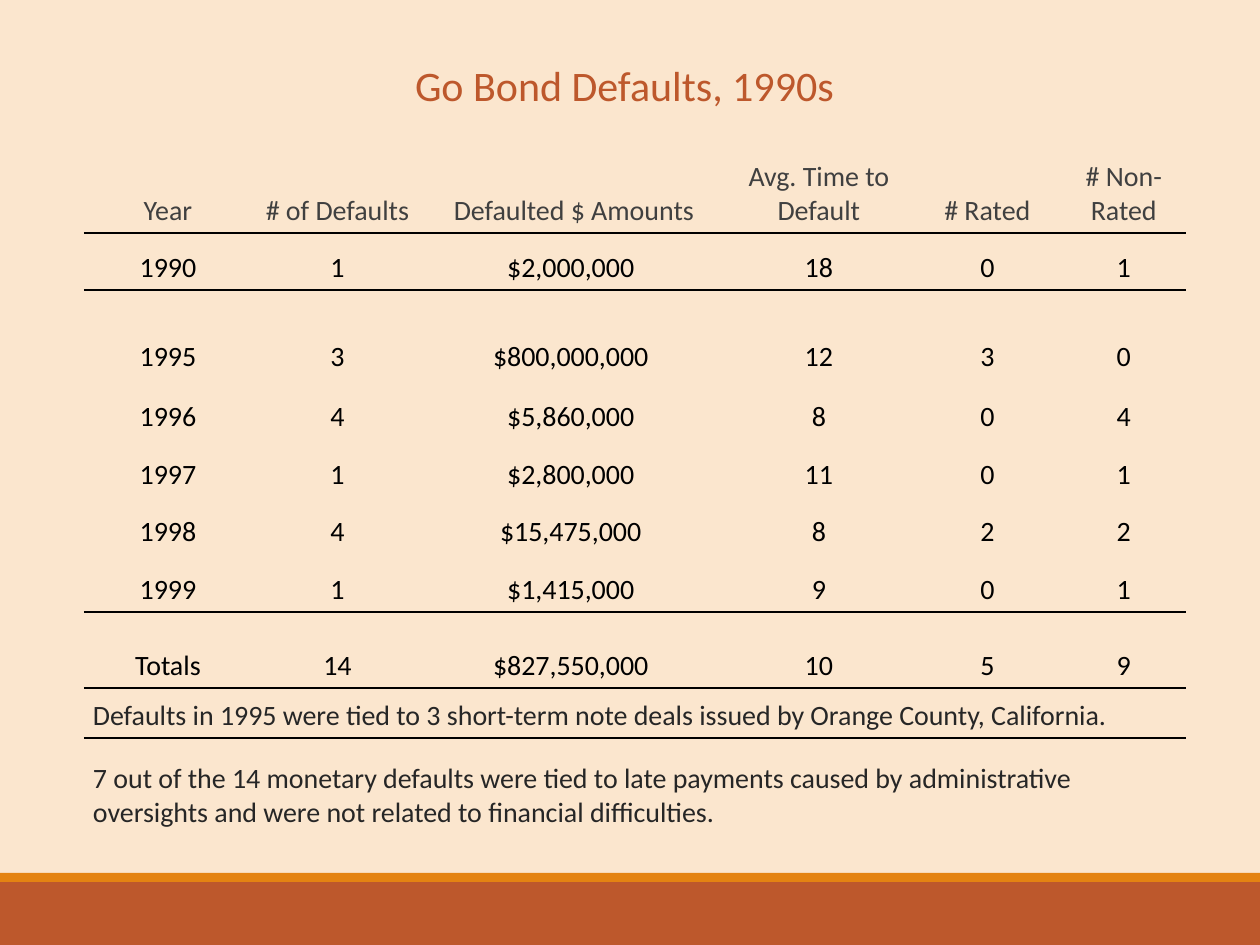
from dataclasses import dataclass

from lxml.etree import SubElement
from pptx import Presentation
from pptx.dml.color import RGBColor
from pptx.enum.shapes import MSO_SHAPE
from pptx.enum.text import MSO_ANCHOR, PP_ALIGN
from pptx.oxml.ns import qn
from pptx.util import Pt

PX = 914400 // 126


@dataclass(frozen=True)
class Theme:
    font: str = "Calibri"
    background: str = "FBE6CE"
    rust: str = "BD582C"
    orange: str = "E48312"
    header: str = "404040"
    body: str = "000000"
    note: str = "262626"
    rule: str = "000000"
    title_size: int = 24
    table_size: int = 16
    rule_width: int = 1


theme = Theme()


def write(paragraph, text, size, color, alignment):
    paragraph.text = text
    paragraph.alignment = alignment
    for run in paragraph.runs:
        run.font.name = theme.font
        run.font.size = Pt(size)
        run.font.color.rgb = RGBColor.from_string(color)


def add_rule(cell, side):
    """Draw a border on one side of a cell: lnT or lnB. Call before filling."""
    properties = cell._tc.get_or_add_tcPr()
    line = SubElement(properties, qn(f"a:{side}"), w=str(Pt(theme.rule_width)))
    fill = SubElement(line, qn("a:solidFill"))
    SubElement(fill, qn("a:srgbClr"), val=theme.rule)


presentation = Presentation()
presentation.slide_width = 1260 * PX
presentation.slide_height = 945 * PX
slide = presentation.slides.add_slide(presentation.slide_layouts[6])
slide.background.fill.solid()
slide.background.fill.fore_color.rgb = RGBColor.from_string(theme.background)

# Footer bands
for top, height, color in ((882, 63, theme.rust), (873, 9, theme.orange)):
    band = slide.shapes.add_shape(
        MSO_SHAPE.RECTANGLE, 0, top * PX, 1260 * PX, height * PX)
    band.shadow.inherit = False
    band.fill.solid()
    band.fill.fore_color.rgb = RGBColor.from_string(color)
    band.line.fill.background()

# Defaults table
records = [
    ("Year", "# of Defaults", "Defaulted $ Amounts", "Avg. Time to Default",
     "# Rated", "# Non-Rated"),
    ("1990", "1", "$2,000,000 ", "18", "0", "1"),
    ("1995", "3", "$800,000,000 ", "12", "3", "0"),
    ("1996", "4", "$5,860,000 ", "8", "0", "4"),
    ("1997", "1", "$2,800,000 ", "11", "0", "1"),
    ("1998", "4", "$15,475,000 ", "8", "2", "2"),
    ("1999", "1", "$1,415,000 ", "9", "0", "1"),
    ("Totals", "14", "$827,550,000 ", "10", "5", "9"),
]
notes = [
    "Defaults in 1995 were tied to 3 short-term note deals issued by "
    "Orange County, California.",
    "7 out of the 14 monetary defaults were tied to late payments caused by "
    "administrative oversights and were not related to financial difficulties.",
]
column_widths = [168, 171, 302, 188, 149, 124]
row_heights = [97, 57, 89, 60, 58, 57, 58, 76, 50, 97]
ruled_rows = {0, 6, 7}  # rows with a rule underneath

frame = slide.shapes.add_table(
    len(row_heights), len(column_widths), 84 * PX, 136 * PX,
    sum(column_widths) * PX, sum(row_heights) * PX)
table = frame.table
table.first_row = False
table.horz_banding = False
style = table._tbl.tblPr.find(qn("a:tableStyleId"))
style.text = "{2D5ABB26-0587-4C30-8999-92F81FD0307C}"  # no style, no grid
for column, width in zip(table.columns, column_widths):
    column.width = width * PX
for row, height in zip(table.rows, row_heights):
    row.height = height * PX

for row_index, row in enumerate(table.rows):
    for cell in row.cells:
        cell.vertical_anchor = MSO_ANCHOR.BOTTOM
        cell.margin_left = cell.margin_right = 9 * PX
        cell.margin_top = cell.margin_bottom = 5 * PX
        if row_index - 1 in ruled_rows:
            add_rule(cell, "lnT")
        if row_index in ruled_rows:
            add_rule(cell, "lnB")
        cell.fill.background()

for row_index, record in enumerate(records):
    color = theme.body if row_index else theme.header
    for column_index, text in enumerate(record):
        paragraph = table.cell(row_index, column_index).text_frame.paragraphs[0]
        write(paragraph, text, theme.table_size, color, PP_ALIGN.CENTER)

for row_index, note in enumerate(notes, start=len(records)):
    cell = table.cell(row_index, 0)
    cell.merge(table.cell(row_index, len(column_widths) - 1))
    write(cell.text_frame.paragraphs[0], note, theme.table_size, theme.note,
          PP_ALIGN.LEFT)

# Title
title = slide.shapes.add_textbox(336 * PX, 63 * PX, 577 * PX, 54 * PX)
title.text_frame.word_wrap = True
paragraph = title.text_frame.paragraphs[0]
paragraph.line_spacing = 0.8
write(paragraph, "Go Bond Defaults, 1990s", theme.title_size, theme.rust,
      PP_ALIGN.CENTER)

presentation.save("out.pptx")
